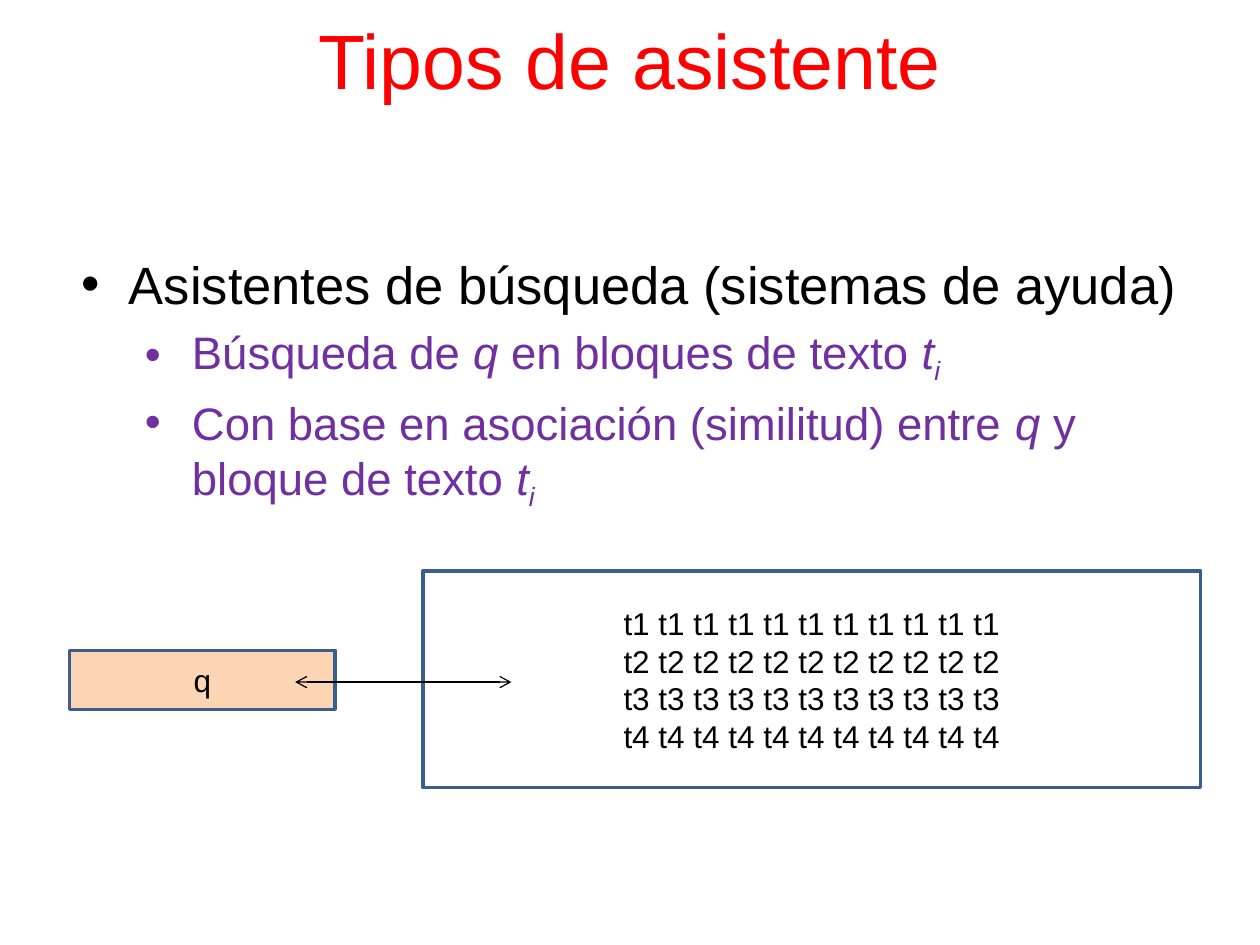
from lxml.etree import SubElement
from pptx import Presentation
from pptx.dml.color import RGBColor as RGB
from pptx.enum.shapes import MSO_CONNECTOR as LINE, MSO_SHAPE as SHAPE
from pptx.enum.text import MSO_ANCHOR as ANCHOR, PP_ALIGN as ALIGN
from pptx.oxml.ns import qn
from pptx.util import Cm, Pt

COLORS = {
    "title": "FF0000",
    "text": "000000",
    "detail": "7030A0",
    "query": "FCD5B5",
    "blocks": "FFFFFF",
    "border": "3A5F8C",
}


def color(name):
    return RGB.from_string(COLORS[name])


def add_run(p, text, size=18, fill="text", font="Arial", italic=False, sub=False):
    r = p.add_run()
    r.text = text
    r.font.name, r.font.size, r.font.italic = font, Pt(size), italic
    r.font.color.rgb = color(fill)
    if sub:
        r._r.get_or_add_rPr().set("baseline", "-25000")
    return r


class SlideBuilder:
    def __init__(self, slide, font="Arial"):
        self.s = slide
        self.font = font

    def text_box(self, left, top, width, height):
        tf = self.s.shapes.add_textbox(Cm(left), Cm(top), Cm(width), Cm(height)).text_frame
        tf.word_wrap = True
        return tf

    def title(self, text, *box):
        tf = self.text_box(*box)
        tf.vertical_anchor = ANCHOR.MIDDLE
        tf.margin_left = tf.margin_right = tf.margin_top = tf.margin_bottom = 0
        p = tf.paragraphs[0]
        p.alignment, p.line_spacing = ALIGN.CENTER, 0.9
        add_run(p, text, size=44, fill="title", font=self.font)

    def bullets(self, items, *box):
        """Each item is a level and its runs: (text, extra format)."""
        tf = self.text_box(*box)
        for i, (level, runs) in enumerate(items):
            p = tf.paragraphs[0] if i == 0 else tf.add_paragraph()
            size, fill, indent = [(30, "text", 0.95), (26, "detail", 2.22)][level]
            p.level, p.space_before = level, Pt(size * 0.2)
            pPr = p._p.get_or_add_pPr()
            pPr.set("marL", str(Cm(indent)))
            pPr.set("indent", str(Cm(-0.95)))
            SubElement(pPr, qn("a:buFont"), typeface=self.font)
            SubElement(pPr, qn("a:buChar"), char="•")
            for text, style in runs:
                add_run(p, text, size=size, fill=fill, font=self.font, **style)

    def box(self, lines, fill, left, top, width, height):
        sp = self.s.shapes.add_shape(SHAPE.RECTANGLE, Cm(left), Cm(top), Cm(width), Cm(height))
        sp.shadow.inherit = False
        sp.fill.solid()
        sp.fill.fore_color.rgb = color(fill)
        sp.line.color.rgb = color("border")
        sp.line.width = Pt(2)
        tf = sp.text_frame
        tf.vertical_anchor = ANCHOR.MIDDLE
        for i, text in enumerate(lines):
            p = tf.paragraphs[0] if i == 0 else tf.add_paragraph()
            p.alignment = ALIGN.CENTER
            add_run(p, text, font=self.font)

    def double_arrow(self, x1, y1, x2, y2):
        line = self.s.shapes.add_connector(LINE.STRAIGHT, Cm(x1), Cm(y1), Cm(x2), Cm(y2))
        line.line.color.rgb = color("text")
        line.line.width = Pt(0.75)
        ln = line.line._get_or_add_ln()
        for end in ("a:headEnd", "a:tailEnd"):
            SubElement(ln, qn(end), type="arrow")
        SubElement(line._element.spPr, qn("a:effectLst"))


def main():
    prs = Presentation()
    prs.slide_width, prs.slide_height = Cm(25.4), Cm(19.05)
    b = SlideBuilder(prs.slides.add_slide(prs.slide_layouts[6]))

    # Title
    b.title("Tipos de asistente", 0, 0, 25.4, 2.62)

    # Bulleted text
    italic = {"italic": True}
    block = [("t", italic), ("i", {"italic": True, "sub": True})]
    b.bullets([
        (0, [("Asistentes de búsqueda (sistemas de ayuda)", {})]),
        (1, [("Búsqueda de ", {}), ("q ", italic), ("en bloques de texto ", {}), *block]),
        (1, [("Con base en asociación (similitud) entre ", {}), ("q", italic),
             (" y bloque de texto ", {}), *block]),
    ], 1.4, 4.95, 22.86, 2.11)

    # Query compared with the text blocks
    b.box(["q"], "query", 1.4, 13.11, 5.36, 1.19)
    b.box([" ".join([f"t{n}"] * 11) for n in range(1, 5)], "blocks", 8.53, 11.51, 15.67, 4.37)
    b.double_arrow(5.95, 13.75, 10.31, 13.75)

    prs.save("out.pptx")


if __name__ == "__main__":
    main()
